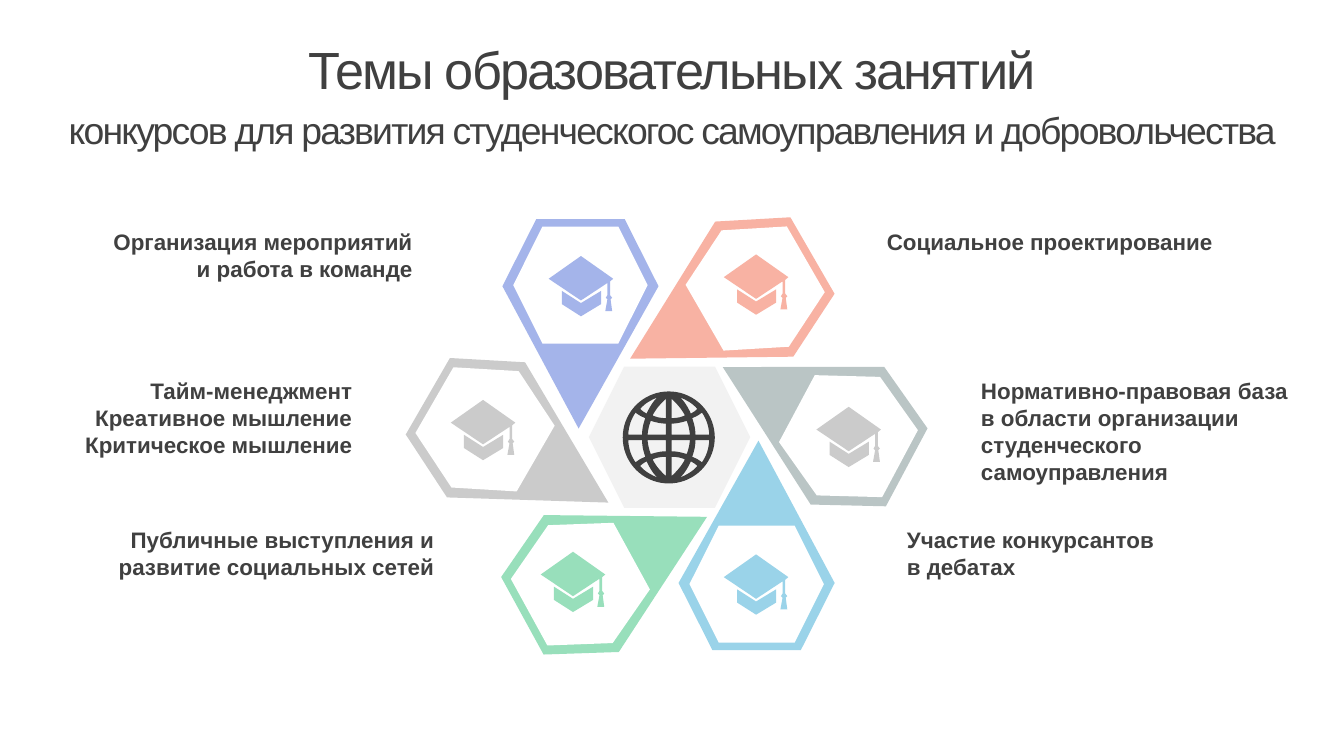
from math import comb, cos, pi, radians, sin

from pptx import Presentation
from pptx.dml.color import RGBColor
from pptx.enum.shapes import MSO_SHAPE
from pptx.enum.text import MSO_ANCHOR, MSO_AUTO_SIZE, PP_ALIGN
from pptx.util import Cm, Pt

HEXAGON = MSO_SHAPE.HEXAGON
MIDDLE = MSO_ANCHOR.MIDDLE
GROW = MSO_AUTO_SIZE.SHAPE_TO_FIT_TEXT
LEFT, CENTER, RIGHT = PP_ALIGN.LEFT, PP_ALIGN.CENTER, PP_ALIGN.RIGHT

COLORS = {
    "text": "404040", "white": "FFFFFF", "hub": "F2F2F2",
    "blue": "A4B4EA", "coral": "F8B2A3", "slate": "BAC5C5",
    "sky": "9AD3E9", "green": "98DFBB", "gray": "CBCBCB",
}

PETAL_W, PETAL_H = 2.95, 3.96
PETAL = [(2.31, 3.96), (0.64, 3.96), (0, 2.69), (1.51, 0), (2.95, 2.69)]
HEX_W, HEX_H, HEX_SHIFT = 2.54, 2.21, 0.73

CAP_W, CAP_H = 1.22, 1.14
CAP_BASE = [(0.25, 0.66), (0.61, 0.89), (0.99, 0.66),
            (0.99, 0.91), (0.61, 1.14), (0.25, 0.91)]
CAP_BOARD = [(0.61, 0), (1.22, 0.43), (1.16, 0.48), (1.16, 0.74), (1.2, 0.79),
             (1.17, 0.82), (1.2, 1.04), (1.07, 1.04), (1.11, 0.82),
             (1.08, 0.79), (1.11, 0.74), (1.11, 0.51), (0.61, 0.84), (0, 0.43)]

# Openings of one globe quadrant, as Bezier curves in units of the radius
GLOBE_CELLS = [
    [[(0.06, 0.42), (0.06, 0.84)],
     [(0.06, 0.84), (0.17, 0.74), (0.28, 0.62), (0.35, 0.48)],
     [(0.35, 0.48), (0.26, 0.43), (0.14, 0.42), (0.06, 0.42)]],
    [[(0.06, 0.06), (0.06, 0.3)],
     [(0.06, 0.3), (0.17, 0.3), (0.29, 0.33), (0.39, 0.36)],
     [(0.39, 0.36), (0.43, 0.26), (0.45, 0.16), (0.46, 0.06)]],
    [[(0.58, 0.06), (0.58, 0.19), (0.55, 0.3), (0.51, 0.42)],
     [(0.51, 0.42), (0.58, 0.45), (0.65, 0.48), (0.72, 0.54)],
     [(0.72, 0.54), (0.81, 0.42), (0.87, 0.25), (0.88, 0.06)]],
    [[(0.48, 0.52), (0.42, 0.65), (0.35, 0.77), (0.25, 0.87)],
     [(0.25, 0.87), (0.39, 0.81), (0.52, 0.74), (0.62, 0.62)],
     [(0.62, 0.62), (0.58, 0.58), (0.54, 0.55), (0.48, 0.52)]],
]

# colour, petal centre, rotation, cap centre
PETALS = [
    ("blue", (10.97, 6.12), 180, (10.98, 5.41)),
    ("coral", (13.64, 5.82), 240, (14.29, 5.38)),
    ("slate", (15.39, 7.9), 298.1, (16.04, 8.26)),
    ("sky", (14.3, 10.31), 0, (14.29, 11.05)),
    ("green", (11.61, 10.69), 61.3, (10.83, 11)),
    ("gray", (9.8, 8.48), 120, (9.13, 8.13)),
]

ROW_TOP, ROW_STEP = 4.19, 2.82
# row, left, width, height, alignment, paragraphs
LABELS = [
    (0, 1.5, 6.55, 1.27, RIGHT, ["Организация мероприятий", "и работа в команде"]),
    (1, 0.51, 6.4, 1.8, RIGHT,
     ["Тайм-менеджмент", "Креативное мышление", "Критическое мышление"]),
    (2, 1.3, 7.16, 2.31, RIGHT, ["Публичные выступления и развитие социальных сетей"]),
    (0, 16.51, 6.81, 0.76, LEFT, ["Социальное проектирование"]),
    (1, 18.29, 6.4, 2.31, LEFT,
     ["Нормативно-правовая база в области организации студенческого самоуправления"]),
    (2, 16.89, 5.36, 1.27, LEFT, ["Участие конкурсантов в дебатах"]),
]


def paint(sp, color):
    sp.shadow.inherit = False
    sp.fill.solid()
    sp.fill.fore_color.rgb = RGBColor.from_string(COLORS[color])
    sp.line.fill.background()


def add_outline(shapes, x, y, contours, color):
    """Draw closed contours, given in cm relative to (x, y), as one shape."""
    builder = None
    for contour in contours:
        pts = [(Cm(px), Cm(py)) for px, py in contour]
        if builder is None:
            builder = shapes.build_freeform(*pts[0])
        else:
            builder.move_to(*pts[0])
        builder.add_line_segments(pts[1:], close=True)
    sp = builder.convert_to_shape(Cm(x), Cm(y))
    paint(sp, color)
    return sp


def add_hexagon(shapes, x, y, w, h, color):
    sp = shapes.add_shape(HEXAGON, Cm(x), Cm(y), Cm(w), Cm(h))
    paint(sp, color)
    return sp


def add_text(tf, text, first, size=12, bold=False, align=LEFT, before=0, spacing=None):
    p = tf.paragraphs[0] if first else tf.add_paragraph()
    p.alignment = align
    if before:
        p.space_before = Pt(before)
    r = p.add_run()
    r.text = text
    r.font.name = "Arial"
    r.font.size = Pt(size)
    r.font.bold = bold
    r.font.color.rgb = RGBColor.from_string(COLORS["text"])
    if spacing:
        r._r.get_or_add_rPr().set("spc", str(spacing))


def add_text_frame(s, x, y, w, h):
    tf = s.shapes.add_textbox(Cm(x), Cm(y), Cm(w), Cm(h)).text_frame
    tf.word_wrap = True
    return tf


def add_title(s, x, y, w, h):
    tf = add_text_frame(s, x, y, w, h)
    tf.vertical_anchor = MIDDLE
    add_text(tf, "Темы образовательных занятий", True, size=28, align=CENTER, spacing=-100)
    add_text(tf, "конкурсов для развития студенческогос самоуправления и добровольчества",
             False, size=20, align=CENTER, before=4, spacing=-100)


def add_label(s, x, y, w, h, align, lines):
    tf = add_text_frame(s, x, y, w, h)
    tf.auto_size = GROW
    for i, line in enumerate(lines):
        add_text(tf, line, i == 0, bold=True, align=align)


def add_petal(s, cx, cy, rotation, color):
    shapes = s.shapes.add_group_shape().shapes
    sp = add_outline(shapes, cx - PETAL_W / 2, cy - PETAL_H / 2, [PETAL], color)
    sp.rotation = rotation
    angle = radians(rotation)
    hx, hy = cx - HEX_SHIFT * sin(angle), cy + HEX_SHIFT * cos(angle)
    sp = add_hexagon(shapes, hx - HEX_W / 2, hy - HEX_H / 2, HEX_W, HEX_H, "white")
    sp.rotation = (rotation + 180) % 360


def add_cap(s, cx, cy, color):
    add_outline(s.shapes, cx - CAP_W / 2, cy - CAP_H / 2, [CAP_BASE, CAP_BOARD], color)


def bezier(points, steps=8):
    n = len(points) - 1
    return [tuple(sum(comb(n, k) * (1 - t) ** (n - k) * t ** k * pt[axis]
                      for k, pt in enumerate(points)) for axis in (0, 1))
            for t in (i / steps for i in range(steps + 1))]


def add_globe(s, cx, cy, radius):
    rim = [(radius * cos(a), radius * sin(a)) for a in (i * pi / 36 for i in range(72))]
    cells = [[pt for curve in cell for pt in bezier(curve)] for cell in GLOBE_CELLS]
    holes = [[(sx * radius * px, sy * radius * py) for px, py in cell]
             for sx in (-1, 1) for sy in (-1, 1) for cell in cells]
    add_outline(s.shapes, cx, cy, [rim] + holes, "text")


def main():
    prs = Presentation()
    prs.slide_width, prs.slide_height = Cm(25.4), Cm(14.29)
    s = prs.slides.add_slide(prs.slide_layouts[6])
    add_title(s, 0, 0.36, 25.4, 2.87)
    for color, center, rotation, _ in PETALS:
        add_petal(s, *center, rotation, color)
    add_hexagon(s.shapes, 11.13, 6.93, 3.05, 2.67, "hub")
    add_globe(s, 12.64, 8.27, 0.87)
    for row, x, w, h, align, lines in LABELS:
        add_label(s, x, ROW_TOP + row * ROW_STEP, w, h, align, lines)
    for color, _, _, center in PETALS:
        add_cap(s, *center, "gray" if color == "slate" else color)
    prs.save("out.pptx")


if __name__ == "__main__":
    main()
